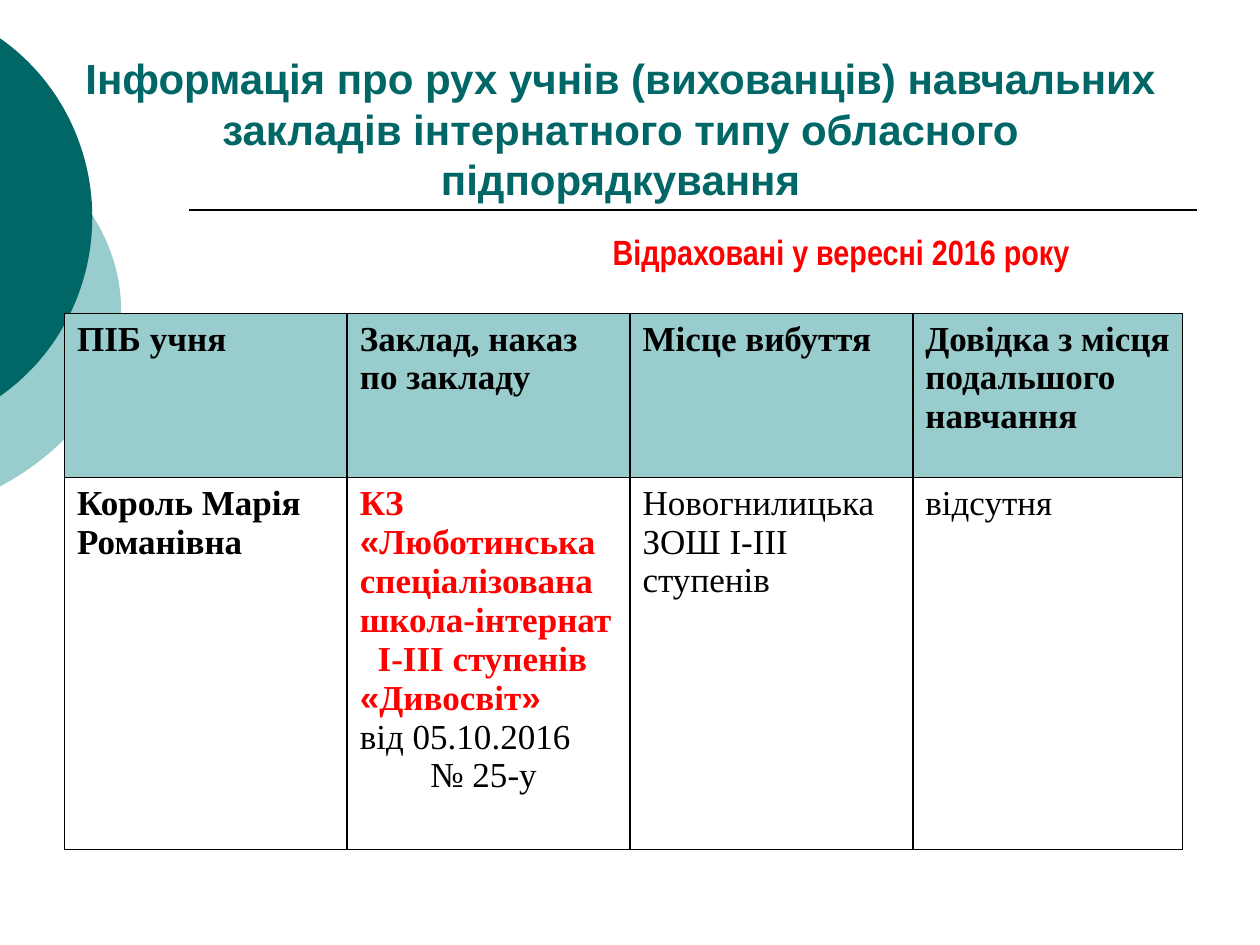
from dataclasses import dataclass

from lxml import etree
from pptx import Presentation
from pptx.dml.color import RGBColor
from pptx.enum.shapes import MSO_CONNECTOR, MSO_SHAPE
from pptx.enum.text import MSO_ANCHOR, MSO_AUTO_SIZE, PP_ALIGN
from pptx.oxml.ns import qn
from pptx.util import Cm, Pt

CENTER = PP_ALIGN.CENTER
BOTTOM = MSO_ANCHOR.BOTTOM
NO_AUTOFIT = MSO_AUTO_SIZE.NONE
FIT_SHAPE = MSO_AUTO_SIZE.SHAPE_TO_FIT_TEXT
OVAL = MSO_SHAPE.OVAL
STRAIGHT = MSO_CONNECTOR.STRAIGHT
TITLE_ONLY = 5

COLORS = {"teal": "006666", "aqua": "99CCCC", "red": "FF0000", "black": "000000"}
SERIF = "Times New Roman"
SANS = "Arial"
COLUMN_WIDTHS = (5.7, 5.7, 5.7, 5.44)
ROW_HEIGHTS = (3.31, 7.49)


@dataclass
class Disc:
    left: float
    top: float
    width: float
    height: float
    color: str


@dataclass
class Line:
    text: str
    color: str = "black"
    bold: bool = True
    indent: float = 0


DISCS = (
    Disc(-8.99, 1.9, 11.43, 8.69, "aqua"),
    Disc(-6.73, 0, 8.59, 8.76, "teal"),
)

HEADERS = ("ПІБ учня", "Заклад, наказ по закладу", "Місце вибуття",
           "Довідка з місця подальшого навчання")
STUDENT = (
    [Line("Король Марія Романівна")],
    [
        Line("КЗ «Люботинська спеціалізована школа-інтернат", "red"),
        Line("І-ІІІ ступенів", "red", indent=0.36),
        Line("«Дивосвіт»", "red"),
        Line("від 05.10.2016", bold=False),
        Line("№ 25-у", bold=False, indent=1.42),
    ],
    [Line("Новогнилицька ЗОШ І-ІІІ ступенів", bold=False)],
    [Line("відсутня", bold=False)],
)


def rgb(name: str) -> RGBColor:
    return RGBColor.from_string(COLORS[name])


def format_run(run, size: float, font: str, color: str, bold: bool = True) -> None:
    run.font.size = Pt(size)
    run.font.name = font
    run.font.color.rgb = rgb(color)
    run.font.bold = bold


def draw_disc(slide, disc: Disc) -> None:
    oval = slide.shapes.add_shape(OVAL, Cm(disc.left), Cm(disc.top),
                                  Cm(disc.width), Cm(disc.height))
    oval.shadow.inherit = False
    oval.fill.solid()
    oval.fill.fore_color.rgb = rgb(disc.color)
    oval.line.fill.background()


def draw_rule(slide) -> None:
    rule = slide.shapes.add_connector(STRAIGHT, Cm(3.81), Cm(4.24), Cm(24.13), Cm(4.24))
    rule.line.color.rgb = rgb("black")
    rule.line.width = Pt(1)
    etree.SubElement(rule._element.spPr, qn("a:effectLst"))


def add_borders(cell) -> None:
    properties = cell._tc.get_or_add_tcPr()
    for index, side in enumerate(("lnL", "lnR", "lnT", "lnB")):
        border = etree.Element(qn(f"a:{side}"), w=str(Pt(1)))
        fill = etree.SubElement(border, qn("a:solidFill"))
        etree.SubElement(fill, qn("a:srgbClr"), val=COLORS["black"])
        properties.insert(index, border)


def add_quoted_text(paragraph, line: Line) -> None:
    """Set the guillemets in the sans font and the rest in the serif font."""
    spaced = line.text.replace("«", "|«|").replace("»", "|»|")
    for part in filter(None, spaced.split("|")):
        run = paragraph.add_run()
        run.text = part
        format_run(run, 20, SANS if part in "«»" else SERIF, line.color, line.bold)


def fill_cell(cell, lines: list[Line], fill: str | None = None) -> None:
    if fill:
        cell.fill.solid()
        cell.fill.fore_color.rgb = rgb(fill)
    else:
        cell.fill.background()
    add_borders(cell)
    frame = cell.text_frame
    for index, line in enumerate(lines):
        paragraph = frame.add_paragraph() if index else frame.paragraphs[0]
        if line.indent:
            paragraph._p.get_or_add_pPr().set("marL", str(Cm(line.indent)))
        add_quoted_text(paragraph, line)


def draw_table(slide) -> None:
    table = slide.shapes.add_table(
        len(ROW_HEIGHTS), len(COLUMN_WIDTHS), Cm(1.3), Cm(6.32),
        Cm(sum(COLUMN_WIDTHS)), Cm(sum(ROW_HEIGHTS))).table
    table.first_row = False
    table.horz_banding = False
    for column, width in zip(table.columns, COLUMN_WIDTHS):
        column.width = Cm(width)
    for row, height in zip(table.rows, ROW_HEIGHTS):
        row.height = Cm(height)
    for index, (header, details) in enumerate(zip(HEADERS, STUDENT)):
        fill_cell(table.cell(0, index), [Line(header)], "aqua")
        fill_cell(table.cell(1, index), details)


def set_title(slide) -> None:
    title = slide.shapes.title
    title.left, title.top, title.width, title.height = Cm(0.89), Cm(0.91), Cm(23.24), Cm(3.2)
    frame = title.text_frame
    frame.text = ("Інформація про рух учнів (вихованців) навчальних закладів "
                  "інтернатного типу обласного підпорядкування")
    frame.word_wrap = True
    frame.auto_size = NO_AUTOFIT
    frame.vertical_anchor = BOTTOM
    frame.margin_left = frame.margin_right = frame.margin_bottom = 0
    frame.margin_top = Cm(0.13)
    paragraph = frame.paragraphs[0]
    paragraph.alignment = CENTER
    paragraph.line_spacing = 1.0
    format_run(paragraph.runs[0], 24, SANS, "teal")


def draw_subtitle(slide) -> None:
    frame = slide.shapes.add_textbox(Cm(12.1), Cm(4.52), Cm(12.01), Cm(1.09)).text_frame
    frame.word_wrap = True
    frame.auto_size = FIT_SHAPE
    frame.text = "Відраховані у вересні 2016 року"
    format_run(frame.paragraphs[0].runs[0], 20, "Arial Narrow", "red")


def main() -> None:
    presentation = Presentation()
    presentation.slide_width, presentation.slide_height = Cm(25.4), Cm(19.05)
    slide = presentation.slides.add_slide(presentation.slide_layouts[TITLE_ONLY])
    set_title(slide)
    for disc in DISCS:
        draw_disc(slide, disc)
    draw_rule(slide)
    draw_table(slide)
    # The title lies above the discs, the rule and the table.
    slide.shapes._spTree.append(slide.shapes.title._element)
    draw_subtitle(slide)
    presentation.save("out.pptx")


if __name__ == "__main__":
    main()
